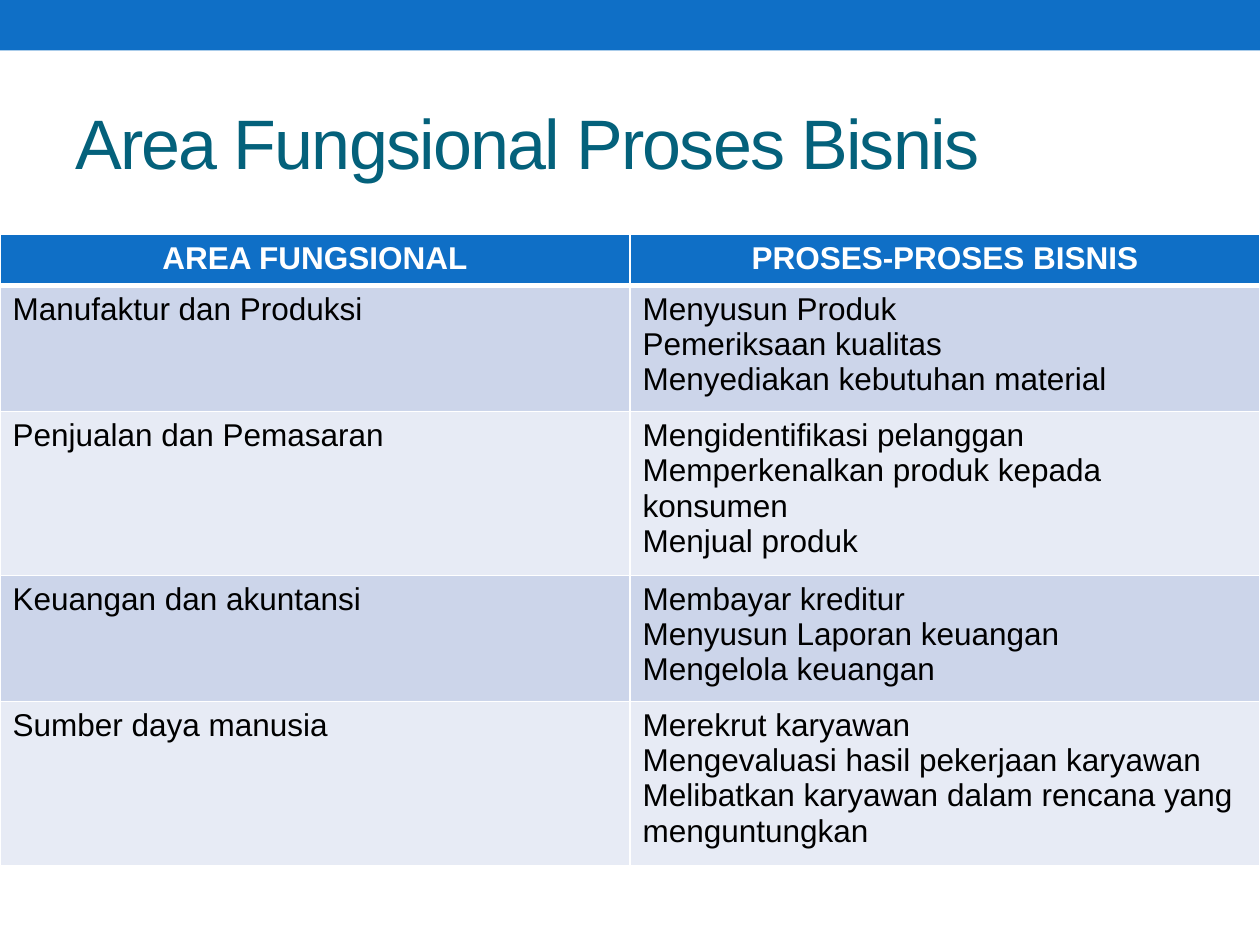
from dataclasses import dataclass

import pptx
import pptx.dml.color
import pptx.enum.shapes
import pptx.enum.text
import pptx.oxml.ns
import pptx.util
from lxml import etree

Pt = pptx.util.Pt
RGBColor = pptx.dml.color.RGBColor
PP_ALIGN = pptx.enum.text.PP_ALIGN

BLUE = RGBColor(0x0F, 0x6F, 0xC6)
TEAL = RGBColor(0x04, 0x61, 0x7B)
WHITE = RGBColor(0xFF, 0xFF, 0xFF)
BLACK = RGBColor(0x00, 0x00, 0x00)
BANDS = (RGBColor(0xCC, 0xD5, 0xEA), RGBColor(0xE7, 0xEB, 0xF5))

FONT = "Arial"
PAGE_WIDTH, PAGE_HEIGHT = 720, 540
ROW_HEIGHT = 29.2


@dataclass(frozen=True)
class Area:
    name: str
    processes: tuple[str, ...]


@dataclass(frozen=True)
class CellStyle:
    fill: RGBColor
    color: RGBColor
    bold: bool
    align: PP_ALIGN
    bottom_line: float


HEADINGS = ("AREA FUNGSIONAL", "PROSES-PROSES BISNIS")
AREAS = (
    Area("Manufaktur dan Produksi",
         ("Menyusun Produk", "Pemeriksaan kualitas", "Menyediakan kebutuhan material")),
    Area("Penjualan dan Pemasaran",
         ("Mengidentifikasi pelanggan", "Memperkenalkan produk kepada konsumen",
          "Menjual produk")),
    Area("Keuangan dan akuntansi",
         ("Membayar kreditur", "Menyusun Laporan keuangan", "Mengelola keuangan")),
    Area("Sumber daya manusia",
         ("Merekrut karyawan", "Mengevaluasi hasil pekerjaan karyawan",
          "Melibatkan karyawan dalam rencana yang menguntungkan")),
)
HEADER_STYLE = CellStyle(BLUE, WHITE, True, PP_ALIGN.CENTER, 3)
BODY_STYLES = [CellStyle(band, BLACK, False, PP_ALIGN.LEFT, 1) for band in BANDS]


def format_text(frame, size: float, color: RGBColor, bold: bool, align: PP_ALIGN) -> None:
    for para in frame.paragraphs:
        para.alignment = align
        for span in para.runs:
            span.font.name = FONT
            span.font.size = Pt(size)
            span.font.bold = bold
            span.font.color.rgb = color


def add_border(cell, side: str, width: float) -> None:
    qn = pptx.oxml.ns.qn
    properties = cell._tc.get_or_add_tcPr()
    line = etree.SubElement(properties, qn(f"a:ln{side}"), w=str(Pt(width)))
    fill = etree.SubElement(line, qn("a:solidFill"))
    etree.SubElement(fill, qn("a:srgbClr"), val=str(WHITE))


def fill_cell(cell, text: str, style: CellStyle, top_line: float) -> None:
    cell.text_frame.text = text
    format_text(cell.text_frame, 18, style.color, style.bold, style.align)
    # Borders come before the fill in the cell properties
    for side, width in (("L", 1), ("R", 1), ("T", top_line), ("B", style.bottom_line)):
        add_border(cell, side, width)
    cell.fill.solid()
    cell.fill.fore_color.rgb = style.fill


def add_top_band(page) -> None:
    band = page.shapes.add_shape(
        pptx.enum.shapes.MSO_SHAPE.RECTANGLE, 0, 0, Pt(PAGE_WIDTH), Pt(28.8))
    band.shadow.inherit = False
    band.fill.solid()
    band.fill.fore_color.rgb = BLUE
    band.line.fill.background()


def add_title(page, text: str) -> None:
    box = page.shapes.add_textbox(Pt(36), Pt(42), Pt(648), Pt(78))
    frame = box.text_frame
    frame.word_wrap = True
    frame.vertical_anchor = pptx.enum.text.MSO_ANCHOR.MIDDLE
    frame.text = text
    format_text(frame, 40, TEAL, False, PP_ALIGN.LEFT)
    # Letters set one point closer
    frame.paragraphs[0].runs[0].font._element.set("spc", "-100")


def add_area_table(page) -> None:
    rows = [HEADINGS] + [(area.name, "\n".join(area.processes)) for area in AREAS]
    table = page.shapes.add_table(
        len(rows), len(HEADINGS), 0, Pt(134), Pt(PAGE_WIDTH),
        Pt(ROW_HEIGHT * len(rows))).table
    top_line = 1
    for row, texts in enumerate(rows):
        style = BODY_STYLES[(row - 1) % len(BODY_STYLES)] if row else HEADER_STYLE
        for column, text in enumerate(texts):
            fill_cell(table.cell(row, column), text, style, top_line)
        top_line = style.bottom_line


def main() -> None:
    deck = pptx.Presentation()
    deck.slide_width, deck.slide_height = Pt(PAGE_WIDTH), Pt(PAGE_HEIGHT)
    page = deck.slides.add_slide(deck.slide_layouts[6])
    add_top_band(page)
    add_title(page, "Area Fungsional Proses Bisnis")
    add_area_table(page)
    deck.save("out.pptx")


if __name__ == "__main__":
    main()
